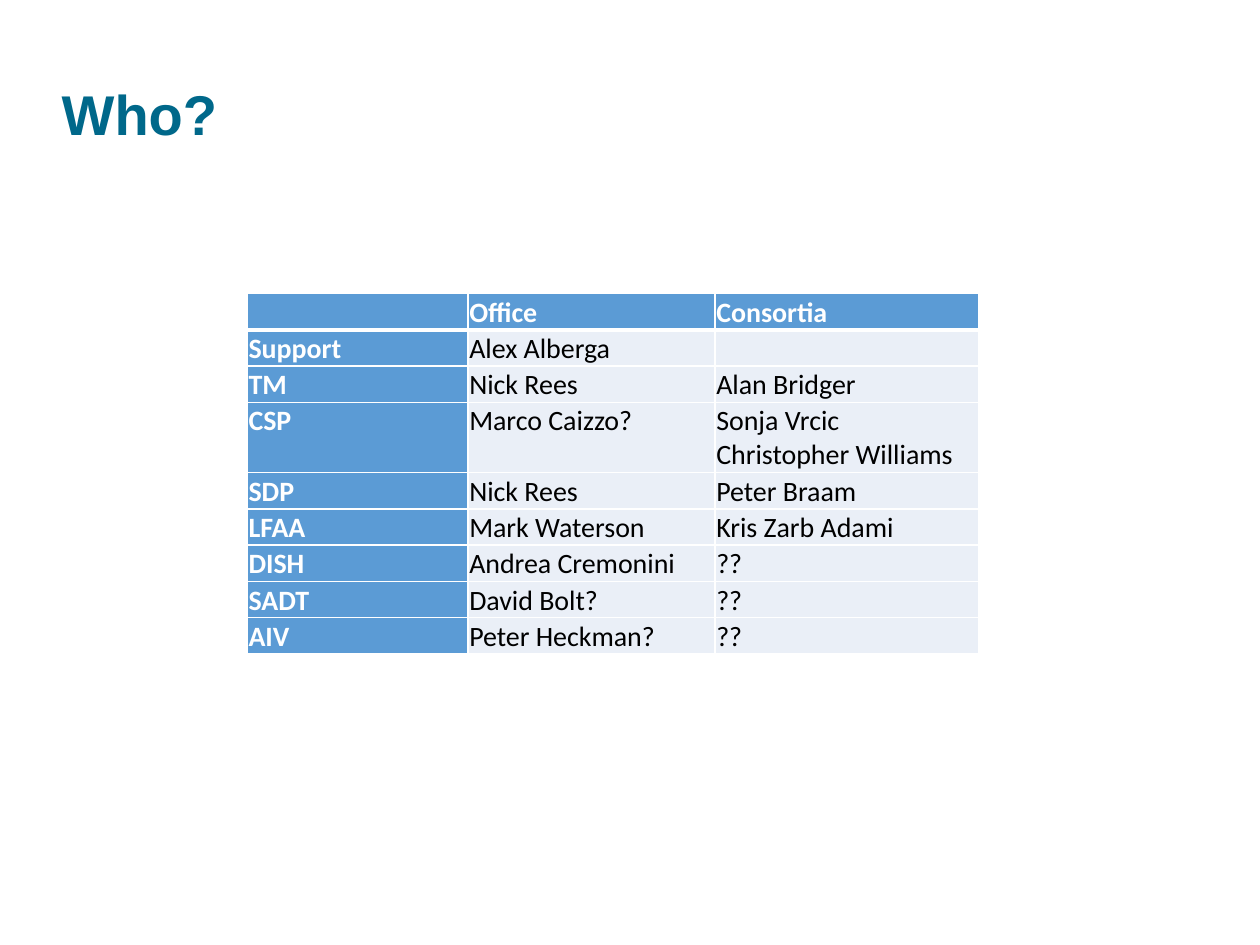
from lxml.etree import SubElement
from pptx import Presentation
from pptx.dml.color import RGBColor
from pptx.enum.text import MSO_ANCHOR as Anchor, PP_ALIGN as Align
from pptx.oxml.ns import qn
from pptx.util import Cm, Pt

COLORS = {
    "title": "00688A",
    "header": "5B9BD5",
    "body": "EAEFF7",
    "white": "FFFFFF",
    "black": "000000",
}
TABLE_SIZE = 16
COLUMN_WIDTHS = [4.45, 4.98, 5.33]
LINE_HEIGHT = 0.69
ROW_PADDING = 0.04
CONTACTS = [
    ["", "Office", "Consortia"],
    ["Support", "Alex Alberga", ""],
    ["TM", "Nick Rees", "Alan Bridger"],
    ["CSP", "Marco Caizzo?", "Sonja Vrcic\nChristopher Williams"],
    ["SDP", "Nick Rees", "Peter Braam"],
    ["LFAA", "Mark Waterson", "Kris Zarb Adami"],
    ["DISH", "Andrea Cremonini", "??"],
    ["SADT", "David Bolt?", "??"],
    ["AIV", "Peter Heckman?", "??"],
]


def color(name):
    return RGBColor.from_string(COLORS[name])


def add_run(paragraph, text, font_name, size, color_name, bold):
    run = paragraph.add_run()
    run.text = text
    font = run.font
    font.name, font.size, font.bold = font_name, Pt(size), bold
    font.color.rgb = color(color_name)


def set_borders(cell, top, bottom):
    """Draw white borders; top and bottom are widths in points."""
    properties = cell._tc.get_or_add_tcPr()
    for side, width in (("L", 1), ("R", 1), ("T", top), ("B", bottom)):
        border = SubElement(properties, qn(f"a:ln{side}"), w=str(Pt(width)))
        fill = SubElement(border, qn("a:solidFill"))
        SubElement(fill, qn("a:srgbClr"), val=COLORS["white"])


def fill_cell(cell, text, is_header, anchor):
    cell.fill.solid()
    cell.fill.fore_color.rgb = color("header" if is_header else "body")
    cell.vertical_anchor = anchor
    cell.margin_left = cell.margin_right = cell.margin_top = Cm(0.03)
    cell.margin_bottom = 0
    paragraph = cell.text_frame.paragraphs[0]
    size = str(TABLE_SIZE * 100)
    if not text:
        SubElement(paragraph._p, qn("a:endParaRPr"), sz=size)
        return
    for index, line in enumerate(text.split("\n")):
        if index:
            paragraph.add_line_break()
            SubElement(paragraph._p[-1], qn("a:rPr"), sz=size)
        add_run(paragraph, line, "Calibri", TABLE_SIZE,
                "white" if is_header else "black", is_header)


def place_title(title, left, top, width, height):
    title.left, title.top = Cm(left), Cm(top)
    title.width, title.height = Cm(width), Cm(height)
    title.text_frame.vertical_anchor = Anchor.MIDDLE
    paragraph = title.text_frame.paragraphs[0]
    paragraph.alignment = Align.LEFT
    paragraph.line_spacing = 0.9
    add_run(paragraph, "Who?", "Arial", 32, "title", True)


def add_contacts(slide, left, top):
    line_counts = [max(text.count("\n") + 1 for text in row) for row in CONTACTS]
    heights = [count * LINE_HEIGHT + ROW_PADDING for count in line_counts]
    table = slide.shapes.add_table(
        len(CONTACTS), len(COLUMN_WIDTHS), Cm(left), Cm(top),
        Cm(sum(COLUMN_WIDTHS)), Cm(sum(heights))).table
    table.horz_banding = False
    table.first_col = True
    for column, width in zip(table.columns, COLUMN_WIDTHS):
        column.width = Cm(width)
    for r, (row, height) in enumerate(zip(CONTACTS, heights)):
        table.rows[r].height = Cm(height)
        anchor = Anchor.TOP if line_counts[r] > 1 else Anchor.BOTTOM
        for c, text in enumerate(row):
            cell = table.cell(r, c)
            set_borders(cell, 3 if r == 1 else 1, 3 if r == 0 else 1)
            fill_cell(cell, text, r == 0 or c == 0, anchor)


def main():
    deck = Presentation()
    deck.slide_width, deck.slide_height = Cm(25.4), Cm(19.05)
    slide = deck.slides.add_slide(deck.slide_layouts[5])
    place_title(slide.shapes.title, 0.99, 1.5, 17.45, 1.73)
    add_contacts(slide, 4.98, 5.92)
    deck.save("out.pptx")


if __name__ == "__main__":
    main()
